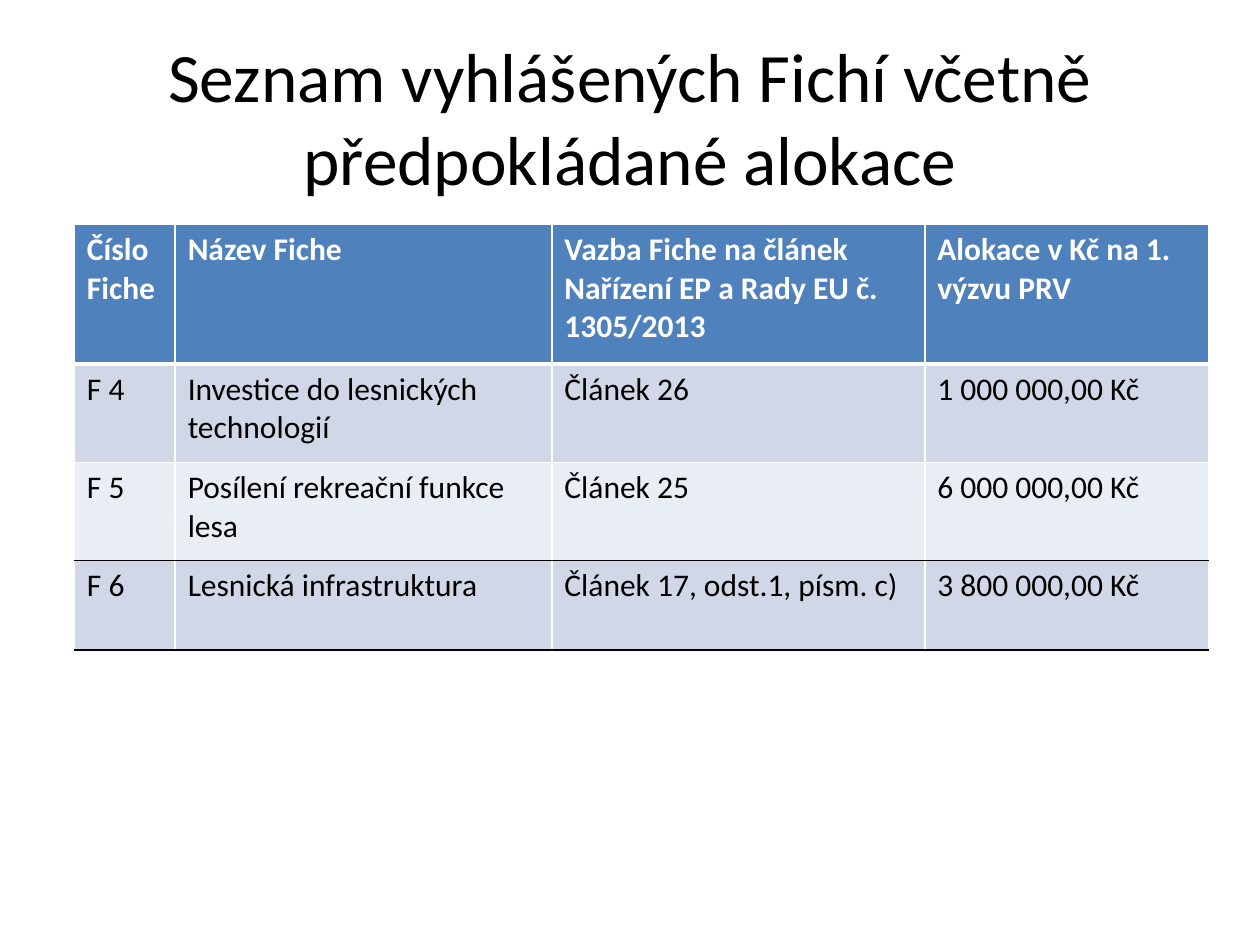
"""Build a slide listing the announced Fiches with their expected allocation."""
import dataclasses

import lxml.etree
import pptx
import pptx.dml.color
import pptx.enum.text
import pptx.oxml.ns
import pptx.util

Inches = pptx.util.Inches
RGB = pptx.dml.color.RGBColor.from_string


@dataclasses.dataclass(frozen=True)
class Theme:
    font: str = "Calibri"
    title_size: float = 39.6
    table_size: float = 18
    text: str = "000000"
    light: str = "FFFFFF"
    header: str = "4F81BD"
    bands: tuple = ("D0D8E8", "E9EDF4")


class SlideBuilder:
    def __init__(self, s, theme):
        self.s = s
        self.theme = theme

    def add_text(self, p, text, size, color, bold=False):
        r = p.add_run()
        r.text = text
        fmt = {"name": self.theme.font, "size": pptx.util.Pt(size), "bold": bold}
        for key, value in fmt.items():
            setattr(r.font, key, value)
        r.font.color.rgb = RGB(color)

    def title(self, text, box):
        tf = self.s.shapes.add_textbox(*map(Inches, box)).text_frame
        fmt = {"word_wrap": True, "vertical_anchor": pptx.enum.text.MSO_ANCHOR.MIDDLE}
        for key, value in fmt.items():
            setattr(tf, key, value)
        p = tf.paragraphs[0]
        p.alignment = pptx.enum.text.PP_ALIGN.CENTER
        self.add_text(p, text, self.theme.title_size, self.theme.text)

    def border(self, cell, side, color, width):
        qn = pptx.oxml.ns.qn
        tc_pr = cell._tc.get_or_add_tcPr()
        ln = lxml.etree.SubElement(tc_pr, qn(f"a:ln{side}"), w=str(pptx.util.Pt(width)))
        fill = lxml.etree.SubElement(ln, qn("a:solidFill"))
        lxml.etree.SubElement(fill, qn("a:srgbClr"), val=color)

    def table(self, rows, box, widths, heights, rules):
        table = self.s.shapes.add_table(len(rows), len(widths), *map(Inches, box)).table
        for column, width in zip(table.columns, widths):
            column.width = Inches(width)
        for i, (row, height) in enumerate(zip(rows, heights)):
            table.rows[i].height = Inches(height)
            header = i == 0
            fill = self.theme.header if header else self.theme.bands[(i - 1) % 2]
            color = self.theme.light if header else self.theme.text
            for j, text in enumerate(row):
                cell = table.cell(i, j)
                self.add_text(cell.text_frame.paragraphs[0], text,
                              self.theme.table_size, color, header)
                for side in "LR":
                    self.border(cell, side, self.theme.light, 1)
                self.border(cell, "T", *rules[i])
                self.border(cell, "B", *rules[i + 1])
                cell.fill.solid()
                cell.fill.fore_color.rgb = RGB(fill)


def main():
    prs = pptx.Presentation()
    prs.slide_width, prs.slide_height = Inches(10), Inches(7.5)
    theme = Theme()
    slide = SlideBuilder(prs.slides.add_slide(prs.slide_layouts[6]), theme)
    slide.title("Seznam vyhlášených Fichí včetně předpokládané alokace", (0.5, 0.3, 9, 1.25))
    rows = [
        ("Číslo Fiche", "Název Fiche",
         "Vazba Fiche na článek Nařízení EP a Rady EU č. 1305/2013",
         "Alokace v Kč na 1. výzvu PRV"),
        ("F 4", "Investice do lesnických technologií", "Článek 26", "1 000 000,00 Kč"),
        ("F 5", "Posílení rekreační funkce lesa", "Článek 25", "6 000 000,00 Kč"),
        ("F 6", "Lesnická infrastruktura", "Článek 17, odst.1, písm. c)", "3 800 000,00 Kč"),
    ]
    heights = (1.11, 0.78, 0.78, 0.71)
    rules = [(theme.light, 1), (theme.light, 3), (theme.light, 1),
             (theme.text, 1), (theme.text, 1)]
    slide.table(rows, (0.59, 1.78, 9, sum(heights)), (0.8, 2.99, 2.96, 2.25), heights, rules)
    prs.save("out.pptx")


if __name__ == "__main__":
    main()
